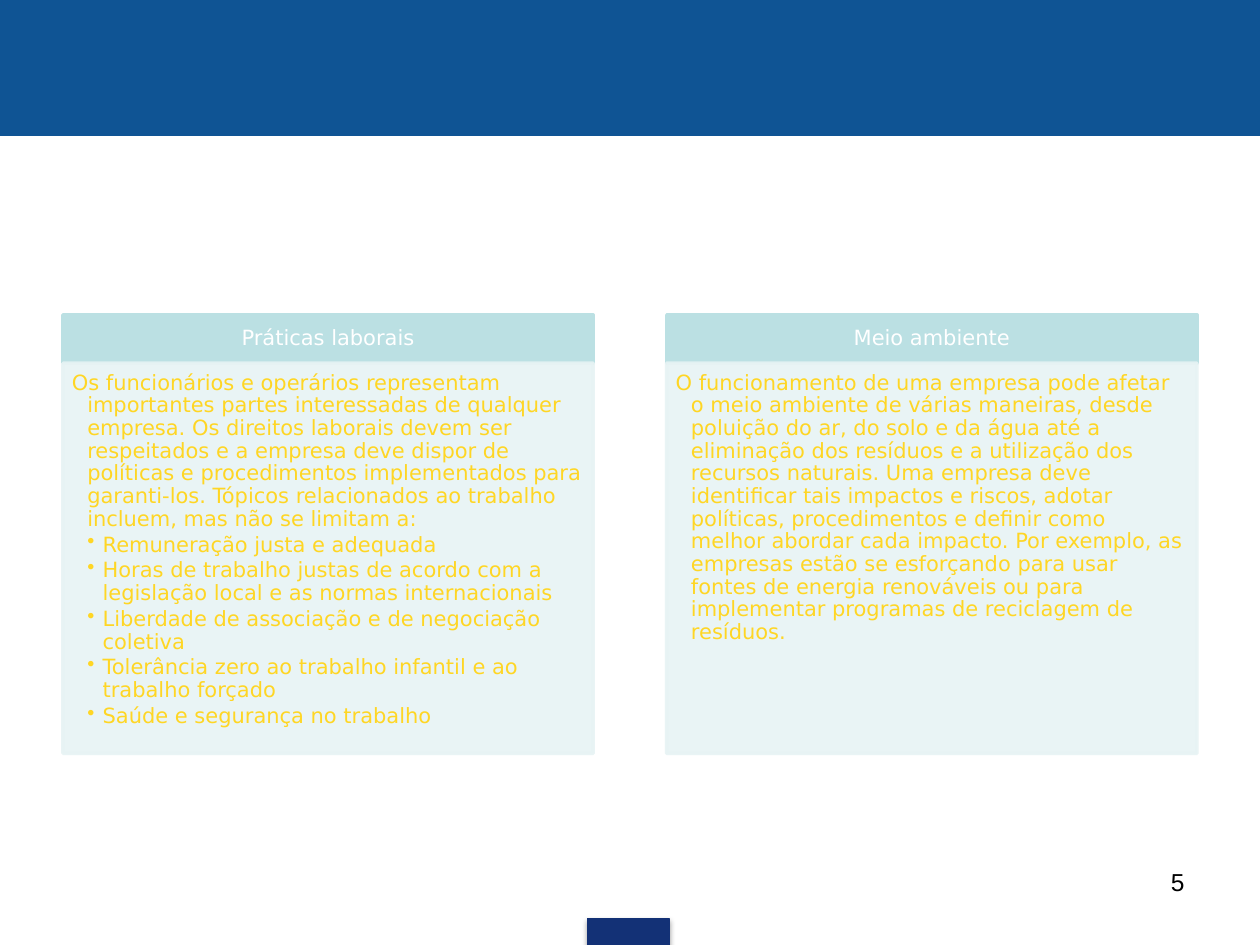
from dataclasses import dataclass

from pptx import Presentation
from pptx.dml.color import RGBColor
from pptx.enum.shapes import MSO_SHAPE as Shape
from pptx.enum.text import MSO_ANCHOR as Anchor, PP_ALIGN as Align
from pptx.oxml.ns import qn
from pptx.oxml.xmlchemy import OxmlElement as new_element
from pptx.util import Cm, Pt


@dataclass(frozen=True)
class Theme:
    band: str = "0F5494"
    tab: str = "133176"
    heading_fill: str = "BBE0E3"
    body_fill: str = "E7F3F4"
    heading_text: str = "FFFFFF"
    body_text: str = "FFD624"
    number_text: str = "000000"
    font: str = "DejaVu Sans"
    number_font: str = "Arial"
    text_size: float = 12
    number_size: float = 14


THEME = Theme()
PAGE_WIDTH, PAGE_HEIGHT = 25.4, 19.05
MARGIN = 1.27
PANEL_TOP, PANEL_WIDTH, PANEL_HEIGHT = 6.35, 10.69, 8.84
HEADING_HEIGHT = 0.97
INDENT = 0.31

PANELS = [
    ("Práticas laborais",
     "Os funcionários e operários representam importantes partes interessadas de "
     "qualquer empresa. Os direitos laborais devem ser respeitados e a empresa deve "
     "dispor de políticas e procedimentos implementados para garanti-los. Tópicos "
     "relacionados ao trabalho incluem, mas não se limitam a:",
     ["Remuneração justa e adequada",
      "Horas de trabalho justas de acordo com a legislação local e as normas internacionais",
      "Liberdade de associação e de negociação coletiva",
      "Tolerância zero ao trabalho infantil e ao trabalho forçado",
      "Saúde e segurança no trabalho"]),
    ("Meio ambiente",
     "O funcionamento de uma empresa pode afetar o meio ambiente de várias maneiras, "
     "desde poluição do ar, do solo e da água até a eliminação dos resíduos e a "
     "utilização dos recursos naturais. Uma empresa deve identificar tais impactos e "
     "riscos, adotar políticas, procedimentos e definir como melhor abordar cada "
     "impacto. Por exemplo, as empresas estão se esforçando para usar fontes de "
     "energia renováveis ou para implementar programas de reciclagem de resíduos.",
     []),
]


def add_child(parent, tag, **attributes):
    child = new_element(tag)
    for name, value in attributes.items():
        child.set(name, str(value))
    parent.append(child)
    return child


def add_box(page, left, top, width, height, color, line_width=0.75, opacity=100):
    box = page.shapes.add_shape(Shape.RECTANGLE, Cm(left), Cm(top), Cm(width), Cm(height))
    box.shadow.inherit = False
    box.fill.solid()
    box.fill.fore_color.rgb = RGBColor.from_string(color)
    box.line.color.rgb = RGBColor.from_string(color)
    box.line.width = Pt(line_width)
    if opacity < 100:
        for paint in box.element.spPr.iter(qn("a:srgbClr")):
            add_child(paint, "a:alpha", val=opacity * 1000)
    return box


def add_shadow(box):
    effects = box.element.spPr.find(qn("a:effectLst"))
    shadow = add_child(effects, "a:outerShdw", blurRad=Pt(3.1), dist=Pt(1.8),
                       dir=90 * 60000, rotWithShape=0)
    paint = add_child(shadow, "a:srgbClr", val="000000")
    add_child(paint, "a:alpha", val=35000)


def set_frame(box, insets, anchor=Anchor.TOP):
    """Set the insets (left, top, right, bottom) in cm and the anchor."""
    frame = box.text_frame
    frame.word_wrap = True
    frame.vertical_anchor = anchor
    (frame.margin_left, frame.margin_top,
     frame.margin_right, frame.margin_bottom) = map(Cm, insets)
    return frame


def write(para, text, color, font=THEME.font, size=THEME.text_size, align=Align.LEFT,
          spacing=0.9, after=0, level=0, bullet=False):
    """Fill a paragraph; each level hangs its first line by one indent."""
    para.level = level
    para.alignment = align
    para.line_spacing = spacing
    para.space_before = Pt(0)
    para.space_after = Pt(after)
    properties = para._p.get_or_add_pPr()
    if level:
        properties.set("marL", str(Cm(INDENT * level)))
        properties.set("indent", str(-Cm(INDENT)))
    if bullet:
        add_child(properties, "a:buChar", char="•")
    else:
        add_child(properties, "a:buNone")
    span = para.add_run()
    span.text = text
    span.font.name = font
    span.font.size = Pt(size)
    span.font.color.rgb = RGBColor.from_string(color)


def add_frame_bars(page):
    add_box(page, 0, 0, PAGE_WIDTH, 2.74, THEME.band)
    add_shadow(add_box(page, 11.84, 18.52, 1.65, 0.53, THEME.tab))


def add_panel(page, left, top, width, height, heading, intro, items):
    head = add_box(page, left, top, width, HEADING_HEIGHT, THEME.heading_fill, 2)
    frame = set_frame(head, (0.23, 0.13, 0.23, 0.13), Anchor.MIDDLE)
    write(frame.paragraphs[0], heading, THEME.heading_text, align=Align.CENTER)

    body = add_box(page, left, top + HEADING_HEIGHT, width, height - HEADING_HEIGHT,
                   THEME.body_fill, 2, opacity=90)
    frame = set_frame(body, (0.18, 0.18, 0.23, 0.25))
    write(frame.paragraphs[0], intro, THEME.body_text, after=1.8, level=1)
    for item in items:
        write(frame.add_paragraph(), item, THEME.body_text, after=1.8, level=2, bullet=True)


def add_page_number(page, left, top, width, height, number):
    box = page.shapes.add_textbox(Cm(left), Cm(top), Cm(width), Cm(height))
    frame = set_frame(box, (0.25, 0.13, 0.25, 0.13))
    write(frame.paragraphs[0], number, THEME.number_text, font=THEME.number_font,
          size=THEME.number_size, align=Align.RIGHT, spacing=1.0)


def main():
    deck = Presentation()
    deck.slide_width, deck.slide_height = Cm(PAGE_WIDTH), Cm(PAGE_HEIGHT)
    page = deck.slides.add_slide(deck.slide_layouts[6])
    add_frame_bars(page)
    step = PAGE_WIDTH - 2 * MARGIN - PANEL_WIDTH
    for column, panel in enumerate(PANELS):
        add_panel(page, MARGIN + column * step, PANEL_TOP, PANEL_WIDTH, PANEL_HEIGHT, *panel)
    add_page_number(page, 18.2, 17.35, 5.93, 1.32, "5")
    deck.save("out.pptx")


if __name__ == "__main__":
    main()
